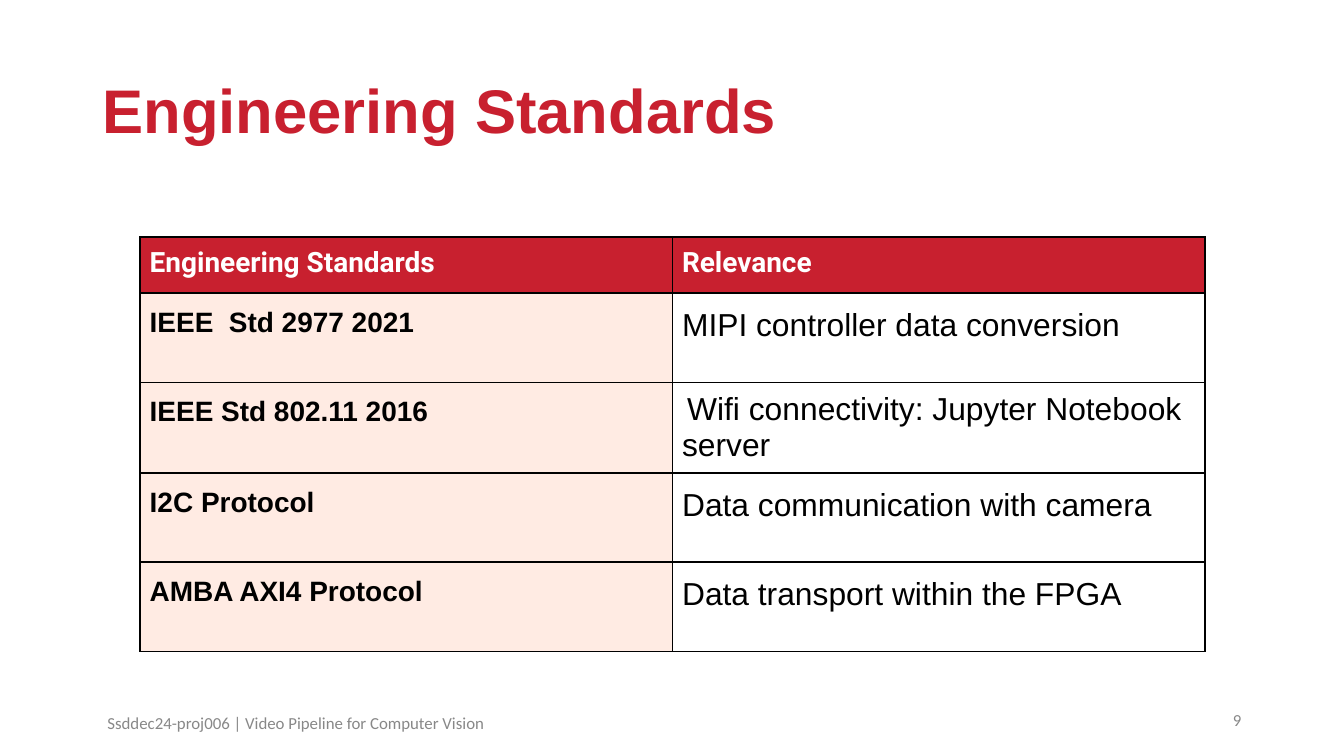
from lxml import etree
from pptx import Presentation
from pptx import util as u
from pptx.dml.color import RGBColor
from pptx.enum import text
from pptx.oxml.ns import qn

COLORS = {
    "red": "C8202F",
    "blush": "FFEBE3",
    "black": "000000",
    "white": "FFFFFF",
    "gray": "888888",
}
STANDARDS = [
    ("IEEE  Std 2977 2021", "MIPI controller data conversion"),
    ("IEEE Std 802.11 2016", "Wifi connectivity: Jupyter Notebook server"),
    ("I2C Protocol", "Data communication with camera"),
    ("AMBA AXI4 Protocol", "Data transport within the FPGA"),
]


class Deck:
    """Holds the style and the current slide."""

    def __init__(self, width, height):
        self.prs = Presentation()
        self.prs.slide_width, self.prs.slide_height = u.Cm(width), u.Cm(height)
        self.slide = self.prs.slides.add_slide(self.prs.slide_layouts[5])

    def style(self, font, size, color, name="Arial", bold=False):
        font.name, font.size, font.bold = name, u.Pt(size), bold
        font.color.rgb = RGBColor.from_string(COLORS[color])

    def frame(self, box, inset_x, inset_y):
        frame = box.text_frame
        frame.word_wrap = True
        frame.auto_size = text.MSO_AUTO_SIZE.NONE
        frame.vertical_anchor = text.MSO_ANCHOR.MIDDLE
        frame.margin_left = frame.margin_right = u.Cm(inset_x)
        frame.margin_top = frame.margin_bottom = u.Cm(inset_y)
        return frame.paragraphs[0]

    def title(self, words, left, top, width, height):
        heading = self.slide.shapes.title
        heading.left, heading.top = u.Cm(left), u.Cm(top)
        heading.width, heading.height = u.Cm(width), u.Cm(height)
        line = self.frame(heading, 0.19, 0.1)
        line.text = words
        line.alignment, line.line_spacing = text.PP_ALIGN.LEFT, 0.9
        self.style(line.font, 33, "red", bold=True)

    def note(self, words, left, top, width, height, inset_x, align):
        box = self.slide.shapes.add_textbox(
            u.Cm(left), u.Cm(top), u.Cm(width), u.Cm(height))
        line = self.frame(box, inset_x, 0.1)
        line.text, line.alignment = words, align
        self.style(line.font, 9, "gray", "Calibri")

    def table(self, left, top, column_widths, row_heights):
        grid = self.slide.shapes.add_table(
            len(row_heights), len(column_widths), u.Cm(left), u.Cm(top),
            u.Cm(sum(column_widths)), u.Cm(sum(row_heights))).table
        for column, width in zip(grid.columns, column_widths):
            column.width = u.Cm(width)
        for row, height in zip(grid.rows, row_heights):
            row.height = u.Cm(height)
        return grid

    def cell(self, cell, words, size, color, fill=None, name="Arial",
             bold=False, spacing=1.15):
        cell.margin_left = cell.margin_right = u.Cm(0.18)
        cell.margin_top = cell.margin_bottom = u.Cm(0.18)
        self.borders(cell)
        if fill:
            cell.fill.solid()
            cell.fill.fore_color.rgb = RGBColor.from_string(COLORS[fill])
        else:
            cell.fill.background()
        line = cell.text_frame.paragraphs[0]
        line.text, line.line_spacing = words, spacing
        self.style(line.font, size, color, name, bold)
        return line

    def borders(self, cell):
        props = cell._tc.get_or_add_tcPr()
        for side in ("a:lnL", "a:lnR", "a:lnT", "a:lnB"):
            edge = etree.SubElement(props, qn(side), w=str(u.Pt(1)))
            solid = etree.SubElement(edge, qn("a:solidFill"))
            etree.SubElement(solid, qn("a:srgbClr"), val=COLORS["black"])


def main():
    deck = Deck(25.4, 14.29)

    # Title
    deck.title("Engineering Standards", 1.75, 0.76, 21.9, 2.77)

    # Standards table
    grid = deck.table(2.65, 4.48, [10.06] * 2, [1.06] + [1.69] * len(STANDARDS))
    for col, heading in enumerate(("Engineering Standards", "Relevance")):
        deck.cell(grid.cell(0, col), heading, 15, "white", "red", "Roboto",
                  bold=True, spacing=1.0)
    for row, (standard, relevance) in enumerate(STANDARDS, 1):
        deck.cell(grid.cell(row, 0), standard, 15, "black", "blush", bold=True)
        wraps = relevance.startswith("Wifi")
        line = deck.cell(grid.cell(row, 1), " " if wraps else relevance, 17,
                         "black", spacing=1.0 if wraps else 1.15)
        if wraps:
            # The two-line entry opens with a narrow space
            deck.style(line.runs[0].font, 11, "black", "Roboto")
            line.add_run().text = relevance

    # Footer and slide number
    deck.note("Ssddec24-proj006 | Video Pipeline for Computer Vision",
              1.78, 13.34, 13.44, 0.66, 0.25, text.PP_ALIGN.LEFT)
    deck.note("9", 17.93, 13.23, 5.72, 0.76, 0.19, text.PP_ALIGN.RIGHT)

    deck.prs.save("out.pptx")


if __name__ == "__main__":
    main()
